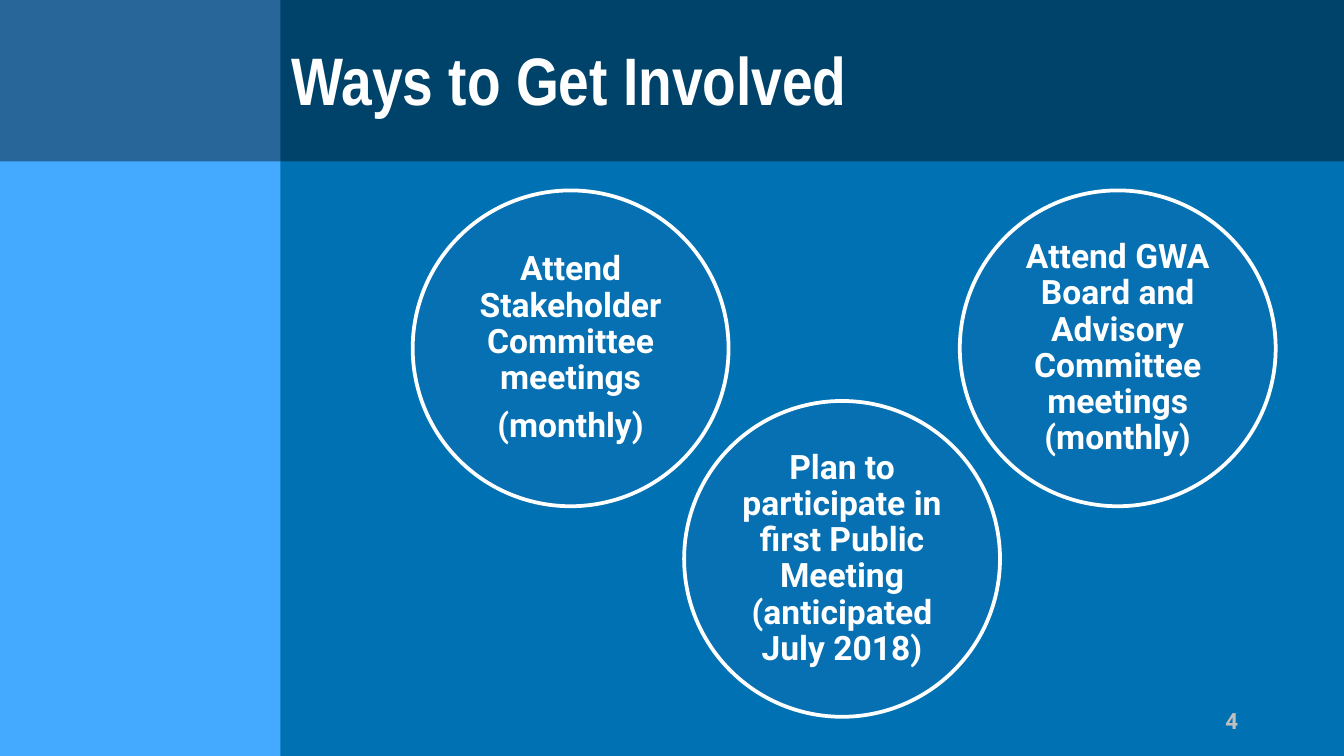
from lxml.etree import SubElement
from pptx import Presentation
from pptx.dml.color import RGBColor
from pptx.enum.shapes import MSO_SHAPE
from pptx.enum.text import MSO_ANCHOR, PP_ALIGN
from pptx.oxml.ns import qn
from pptx.util import Cm, Pt

OCEAN = RGBColor(0x00, 0x71, 0xB2)
SKY = RGBColor(0x43, 0xAA, 0xFF)
DISC = RGBColor(0x0D, 0x70, 0xB3)
BLACK = RGBColor(0x00, 0x00, 0x00)
WHITE = RGBColor(0xFF, 0xFF, 0xFF)
SILVER = RGBColor(0xC0, 0xC0, 0xC0)

WIDTH, HEIGHT = 25.4, 14.29
DIAMETER = 5.97
UPPER, LOWER = 3.6, 7.58
CIRCLES = [
    (7.8, UPPER, ["Attend Stakeholder Committee meetings", "(monthly)"]),
    (12.93, LOWER, ["Plan to participate in first Public Meeting (anticipated July 2018)"]),
    (18.14, UPPER, ["Attend GWA Board and Advisory Committee meetings (monthly)"]),
]


class InvolvementSlide:
    """Draw the slide's panels, circles and text in one style."""

    def __init__(self, page):
        self.page = page
        page.background.fill.solid()
        page.background.fill.fore_color.rgb = OCEAN

    def shape(self, kind, left, top, width, height, color, opacity=100):
        shape = self.page.shapes.add_shape(kind, Cm(left), Cm(top), Cm(width), Cm(height))
        shape.shadow.inherit = False
        shape.line.fill.background()
        shape.fill.solid()
        shape.fill.fore_color.rgb = color
        if opacity < 100:
            tint = shape.element.spPr.find(qn("a:solidFill")).find(qn("a:srgbClr"))
            SubElement(tint, qn("a:alpha"), val=str(opacity * 1000))
        return shape

    def panel(self, width, height, color, opacity=100):
        self.shape(MSO_SHAPE.RECTANGLE, 0, 0, width, height, color, opacity)

    def fill_text(self, frame, lines, size, font, color, align, inset, anchor):
        frame.word_wrap = True
        frame.vertical_anchor = anchor
        frame.margin_left = frame.margin_right = Cm(inset[0])
        frame.margin_top = frame.margin_bottom = Cm(inset[1])
        for index, line in enumerate(lines):
            para = frame.add_paragraph() if index else frame.paragraphs[0]
            para.text = line
            para.alignment = align
            para.font.size = Pt(size)
            para.font.name = font
            para.font.bold = True
            para.font.color.rgb = color
        return frame.paragraphs

    def text(self, left, top, width, height, line, size, font, color, align, inset, anchor):
        box = self.page.shapes.add_textbox(Cm(left), Cm(top), Cm(width), Cm(height))
        self.fill_text(box.text_frame, [line], size, font, color, align, inset, anchor)

    def circle(self, left, top, lines):
        disc = self.shape(MSO_SHAPE.OVAL, left, top, DIAMETER, DIAMETER, DISC, 50)
        disc.line.color.rgb = WHITE
        disc.line.width = Pt(2)
        paras = self.fill_text(disc.text_frame, lines, 18, "Roboto", WHITE,
                               PP_ALIGN.CENTER, (0.18, 0.18), MSO_ANCHOR.MIDDLE)
        for para in paras:
            para.line_spacing = 0.9
            para.space_after = Pt(6.3)


def main():
    deck = Presentation()
    deck.slide_width, deck.slide_height = Cm(WIDTH), Cm(HEIGHT)
    slide = InvolvementSlide(deck.slides.add_slide(deck.slide_layouts[6]))
    slide.panel(5.3, HEIGHT, SKY)
    slide.panel(WIDTH, 3.05, BLACK, 40)
    slide.text(5.41, 0.3, 12.67, 2.39, "Ways to Get Involved", 36, "Arial Narrow",
               WHITE, PP_ALIGN.LEFT, (0.1, 0.05), MSO_ANCHOR.MIDDLE)
    for left, top, lines in CIRCLES:
        slide.circle(left, top, lines)
    slide.text(17.93, 13.23, 5.72, 0.76, "4", 12, "Roboto",
               SILVER, PP_ALIGN.RIGHT, (0.25, 0.13), MSO_ANCHOR.TOP)
    deck.save("out.pptx")


if __name__ == "__main__":
    main()
